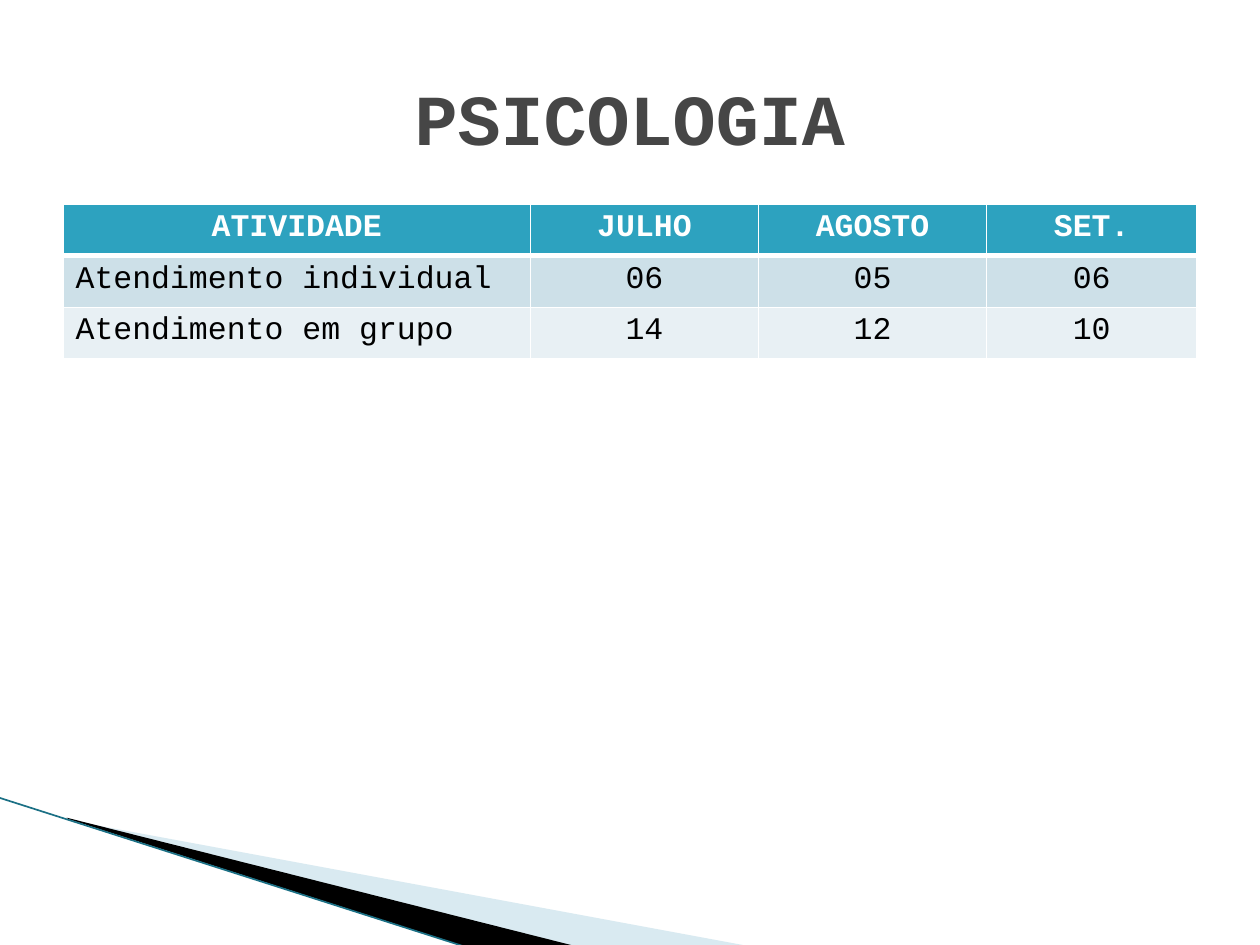
from dataclasses import dataclass

from lxml import etree
from pptx import Presentation
from pptx.dml.color import RGBColor
from pptx.enum.shapes import MSO_CONNECTOR
from pptx.enum.text import MSO_ANCHOR, PP_ALIGN
from pptx.oxml.ns import qn
from pptx.util import Inches, Pt

LEFT, CENTER = PP_ALIGN.LEFT, PP_ALIGN.CENTER
MIDDLE = MSO_ANCHOR.MIDDLE
STRAIGHT = MSO_CONNECTOR.STRAIGHT
TITLE_ONLY = 5


@dataclass(frozen=True)
class Theme:
    font: str = "Courier New"
    title_size: float = 41
    cell_size: float = 18
    title: str = "464646"
    head: str = "2DA2BF"
    bands: tuple = ("CDE0E8", "E8F0F4")
    white: str = "FFFFFF"
    black: str = "000000"
    pale: str = "A0CBDC"
    edge: str = "1B7085"


@dataclass(frozen=True)
class Wedge:
    points: tuple
    color: str
    alpha: int = 100


THEME = Theme()
WEDGES = (
    Wedge(((0.55, 6.51), (5.95, 7.51), (4.56, 7.51), (0.55, 6.5)), THEME.pale, 40),
    Wedge(((0.53, 6.49), (4.57, 7.51), (3.72, 7.52), (0.54, 6.5)), THEME.black),
)
COLS = (3.71, 1.81, 1.81, 1.67)
ROW = 0.41
ROWS = (
    ("ATIVIDADE", "JULHO", "AGOSTO", "SET."),
    ("Atendimento individual", "06", "05", "06"),
    ("Atendimento em grupo", "14", "12", "10"),
)


def rgb(color: str) -> RGBColor:
    return RGBColor.from_string(color)


def write(frame, text: str, *, size: float, color: str, bold=False, align=CENTER) -> None:
    para = frame.paragraphs[0]
    para.alignment = align
    run = para.add_run()
    run.text = text
    font = run.font
    font.name, font.size, font.bold = THEME.font, Pt(size), bold
    font.color.rgb = rgb(color)


def draw_wedge(slide, wedge: Wedge) -> None:
    first, *rest = [(Inches(x), Inches(y)) for x, y in wedge.points]
    pen = slide.shapes.build_freeform(*first)
    pen.add_line_segments(rest)
    shape = pen.convert_to_shape()
    shape.shadow.inherit = False
    shape.fill.solid()
    shape.fill.fore_color.rgb = rgb(wedge.color)
    shape.line.fill.background()
    if wedge.alpha < 100:
        tint = next(shape.element.spPr.iter(qn("a:srgbClr")))
        etree.SubElement(tint, qn("a:alpha"), val=str(wedge.alpha * 1000))


def draw_edge(slide) -> None:
    ends = [Inches(n) for n in (-0.01, 6.33, 3.71, 7.52)]
    line = slide.shapes.add_connector(STRAIGHT, *ends)
    line.line.color.rgb = rgb(THEME.edge)
    line.line.width = Pt(0.95)
    etree.SubElement(line.element.spPr, qn("a:effectLst"))


def set_border(cell, base: float) -> None:
    props = cell._tc.get_or_add_tcPr()
    widths = {"lnL": 1, "lnR": 1, "lnT": 1, "lnB": base}
    for spot, (side, width) in enumerate(widths.items()):
        line = etree.Element(qn(f"a:{side}"), w=str(Pt(width)))
        fill = etree.SubElement(line, qn("a:solidFill"))
        etree.SubElement(fill, qn("a:srgbClr"), val=THEME.white)
        props.insert(spot, line)


def draw_table(slide) -> None:
    table = slide.shapes.add_table(
        len(ROWS), len(COLS), Inches(0.5), Inches(1.62),
        Inches(sum(COLS)), Inches(ROW * len(ROWS))).table
    for col, width in zip(table.columns, COLS):
        col.width = Inches(width)
    for r, texts in enumerate(ROWS):
        table.rows[r].height = Inches(ROW)
        head = r == 0
        for c, text in enumerate(texts):
            cell = table.cell(r, c)
            cell.fill.solid()
            cell.fill.fore_color.rgb = rgb(THEME.head if head else THEME.bands[r - 1])
            set_border(cell, 3 if head else 1)
            if r == 1:  # the rule under the header is shared by both rows
                cell._tc.tcPr.find(qn("a:lnT")).set("w", str(Pt(3)))
            write(cell.text_frame, text, size=THEME.cell_size, bold=head,
                  color=THEME.white if head else THEME.black,
                  align=CENTER if head or c else LEFT)


def draw_title(slide) -> None:
    title = slide.shapes.title
    title.left, title.top = Inches(0.5), Inches(0.3)
    title.width, title.height = Inches(9), Inches(1.25)
    title.text_frame.vertical_anchor = MIDDLE
    write(title.text_frame, "PSICOLOGIA", size=THEME.title_size,
          color=THEME.title, bold=True)


def main() -> None:
    deck = Presentation()
    deck.slide_width, deck.slide_height = Inches(10), Inches(7.5)
    slide = deck.slides.add_slide(deck.slide_layouts[TITLE_ONLY])
    # Corner decoration
    for wedge in WEDGES:
        draw_wedge(slide, wedge)
    draw_edge(slide)
    # Content
    draw_table(slide)
    draw_title(slide)
    deck.save("out.pptx")


if __name__ == "__main__":
    main()
